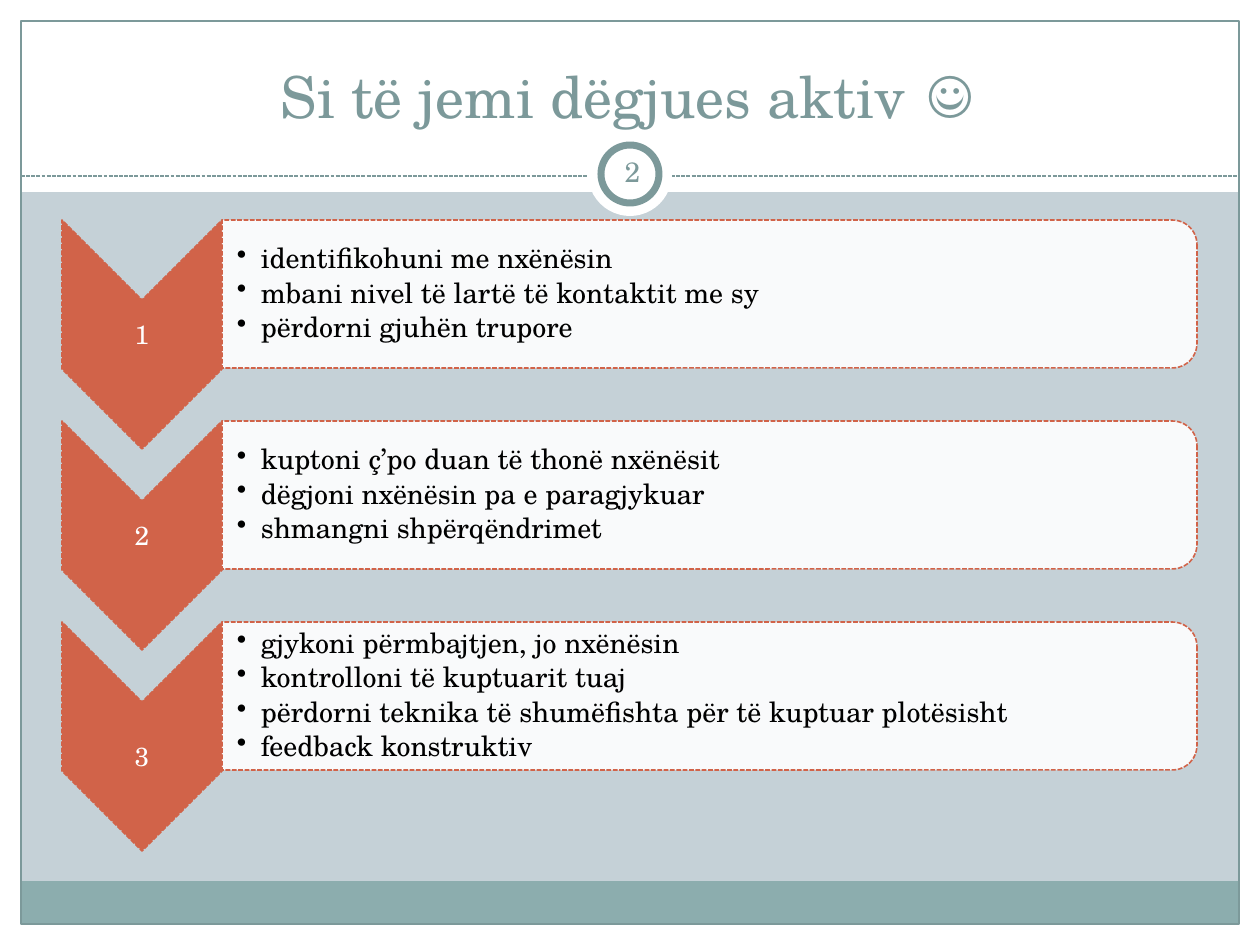
from pptx import Presentation
from pptx.dml.color import RGBColor
from pptx.enum.dml import MSO_LINE
from pptx.enum.shapes import MSO_CONNECTOR, MSO_SHAPE
from pptx.enum.text import MSO_ANCHOR, PP_ALIGN
from pptx.oxml.ns import qn
from pptx.util import Pt
from lxml.etree import SubElement

# Content
TITLE = "Si të jemi dëgjues aktiv ☺"
PAGE_NUMBER = "2"
STEPS = [
    ["identifikohuni me nxënësin",
     "mbani nivel të lartë të kontaktit me sy",
     "përdorni gjuhën trupore"],
    ["kuptoni ç’po duan të thonë nxënësit",
     "dëgjoni nxënësin pa e paragjykuar",
     "shmangni shpërqëndrimet"],
    ["gjykoni përmbajtjen, jo nxënësin",
     "kontrolloni të kuptuarit tuaj",
     "përdorni teknika të shumëfishta për të kuptuar plotësisht",
     "feedback konstruktiv"],
]
NUMBER_DROPS = [0, 0, 20]

# Style
FONT = "TeX Gyre Schola"
BACKGROUND = RGBColor(0xC5, 0xD1, 0xD7)
WHITE = RGBColor(0xFF, 0xFF, 0xFF)
BLACK = RGBColor(0, 0, 0)
TEAL = RGBColor(0x7C, 0x99, 0x9A)
FOOTER = RGBColor(0x8C, 0xAD, 0xAE)
ORANGE = RGBColor(0xD1, 0x63, 0x49)

# Layout in px, 126 to the inch
WIDTH, HEIGHT, MARGIN = 1260, 945, 21
HEADER_HEIGHT, RULE_TOP = 192, 176
STEP_TOP, STEP_PITCH = 220, 201
CHEVRON_LEFT, CHEVRON_WIDTH, CHEVRON_HEIGHT = 62, 160, 229
PANEL_LEFT, PANEL_WIDTH, PANEL_HEIGHT = 222, 975, 148


def px(length):
    return round(length * 914400 / 126)


def add_shape(slide, kind, box, fill=None, line=None, weight=0.75, dash=None, turned=False):
    """Place a shape in its visible box; a turned one is rotated by 90 degrees."""
    left, top, width, height = box
    if turned:
        left, top = left + (width - height) / 2, top + (height - width) / 2
        width, height = height, width
    shape = slide.shapes.add_shape(kind, px(left), px(top), px(width), px(height))
    shape.rotation = 90 if turned else 0
    shape.shadow.inherit = False
    if fill is None:
        shape.fill.background()
    else:
        shape.fill.solid()
        shape.fill.fore_color.rgb = fill
    if line is None:
        shape.line.fill.background()
    else:
        shape.line.color.rgb = line
        shape.line.width = Pt(weight)
        shape.line.dash_style = dash
    return shape


def add_text(slide, box, lines, size, color, anchor=MSO_ANCHOR.MIDDLE, inset=1, bullets=False):
    frame = slide.shapes.add_textbox(*map(px, box)).text_frame
    frame.word_wrap = True
    frame.vertical_anchor = anchor
    frame.margin_left = px(15 if bullets else inset)
    frame.margin_right = frame.margin_top = frame.margin_bottom = px(inset)
    for index, line in enumerate(lines):
        paragraph = frame.paragraphs[0] if index == 0 else frame.add_paragraph()
        paragraph.text = line
        paragraph.alignment = PP_ALIGN.LEFT if bullets else PP_ALIGN.CENTER
        paragraph.font.name = FONT
        paragraph.font.size = Pt(size)
        paragraph.font.color.rgb = color
        if bullets:
            paragraph.line_spacing = 0.9
            paragraph.space_after = Pt(size * 0.15)
            properties = paragraph._p.get_or_add_pPr()
            properties.set("marL", str(px(24)))
            properties.set("indent", str(px(-24)))
            bullet = SubElement(properties, qn("a:buChar"))
            bullet.set("char", "•")
            # The bullet must come before the default run properties
            properties.find(qn("a:defRPr")).addprevious(bullet)


def add_frame(slide):
    # White header and page edges, teal footer and border
    inner_width, inner_height = WIDTH - 2 * MARGIN, HEIGHT - 2 * MARGIN
    for box, color in [
        ((0, HEIGHT - MARGIN, WIDTH, MARGIN), WHITE),
        ((0, 0, WIDTH, HEADER_HEIGHT), WHITE),
        ((0, 0, MARGIN, HEIGHT), WHITE),
        ((WIDTH - MARGIN, 0, MARGIN, HEIGHT), WHITE),
        ((MARGIN, 881, inner_width, 43), FOOTER),
    ]:
        add_shape(slide, MSO_SHAPE.RECTANGLE, box, color)
    add_shape(slide, MSO_SHAPE.RECTANGLE, (MARGIN, MARGIN, inner_width, inner_height), line=TEAL)

    # Dashed rule under the title
    rule = slide.shapes.add_connector(MSO_CONNECTOR.STRAIGHT, px(MARGIN), px(RULE_TOP),
                                      px(WIDTH - MARGIN), px(RULE_TOP))
    rule.line.color.rgb = TEAL
    rule.line.width = Pt(0.75)
    rule.line.dash_style = MSO_LINE.SQUARE_DOT
    SubElement(rule._element.spPr, qn("a:effectLst"))

    # Page number badge
    add_shape(slide, MSO_SHAPE.OVAL, (588, 132, 84, 84), WHITE)
    add_shape(slide, MSO_SHAPE.OVAL, (601, 145, 58, 58), WHITE, TEAL, 4)
    add_text(slide, (601, 141, 63, 60), [PAGE_NUMBER], 16, TEAL, inset=6)


def add_step(slide, index, lines, number_drop):
    top = STEP_TOP + index * STEP_PITCH
    add_shape(slide, MSO_SHAPE.CHEVRON, (CHEVRON_LEFT, top, CHEVRON_WIDTH, CHEVRON_HEIGHT),
              ORANGE, ORANGE, 0.9, MSO_LINE.SQUARE_DOT, turned=True)
    add_text(slide, (CHEVRON_LEFT, top + 80 + number_drop, CHEVRON_WIDTH, 68),
             [str(index + 1)], 15, WHITE)

    panel = add_shape(slide, MSO_SHAPE.ROUND_2_SAME_RECTANGLE,
                      (PANEL_LEFT, top, PANEL_WIDTH, PANEL_HEIGHT),
                      WHITE, ORANGE, 0.9, MSO_LINE.SQUARE_DOT, turned=True)
    fill_color = panel._element.spPr.find(qn("a:solidFill")).find(qn("a:srgbClr"))
    SubElement(fill_color, qn("a:alpha")).set("val", "90000")
    add_text(slide, (PANEL_LEFT, top + 7, PANEL_WIDTH - 7, PANEL_HEIGHT - 14),
             lines, 16, BLACK, bullets=True)


def main():
    presentation = Presentation()
    presentation.slide_width, presentation.slide_height = px(WIDTH), px(HEIGHT)
    slide = presentation.slides.add_slide(presentation.slide_layouts[6])
    slide.background.fill.solid()
    slide.background.fill.fore_color.rgb = BACKGROUND

    add_frame(slide)
    add_text(slide, (42, 32, 1176, 104), [TITLE], 33, TEAL, MSO_ANCHOR.BOTTOM, inset=6)
    for index, (lines, number_drop) in enumerate(zip(STEPS, NUMBER_DROPS)):
        add_step(slide, index, lines, number_drop)
    presentation.save("out.pptx")


if __name__ == "__main__":
    main()
